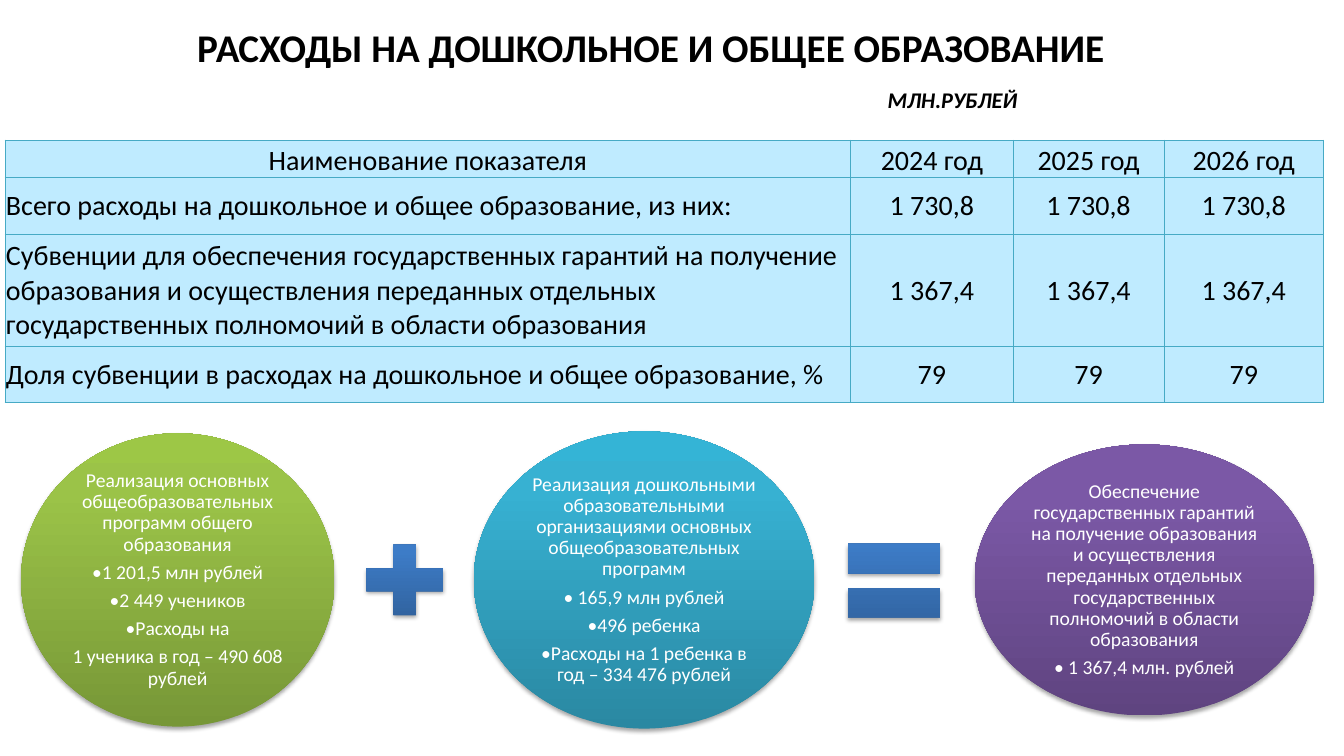
from copy import deepcopy

from lxml.etree import SubElement
from pptx import Presentation
from pptx.dml.color import RGBColor
from pptx.enum.shapes import MSO_SHAPE as Preset
from pptx.enum.text import MSO_ANCHOR as Anchor, PP_ALIGN as Align
from pptx.oxml.ns import qn
from pptx.util import Cm, Pt

BLACK = RGBColor(0x00, 0x00, 0x00)
WHITE = RGBColor(0xFF, 0xFF, 0xFF)
CELL_BLUE = RGBColor(0xBF, 0xEB, 0xFF)
GRID_TEAL = RGBColor(0x46, 0xAA, 0xC5)
GREEN = (RGBColor(0x77, 0x97, 0x37), RGBColor(0x9B, 0xC3, 0x48), RGBColor(0x9D, 0xC7, 0x46))
TEAL = (RGBColor(0x2A, 0x88, 0xA2), RGBColor(0x37, 0xB1, 0xD2), RGBColor(0x34, 0xB4, 0xD6))
PURPLE = (RGBColor(0x5F, 0x44, 0x80), RGBColor(0x7B, 0x58, 0xA6), RGBColor(0x7C, 0x57, 0xA8))
BLUE = (RGBColor(0x2F, 0x5F, 0x99), RGBColor(0x3D, 0x7C, 0xC7), RGBColor(0x3A, 0x7C, 0xCB))

HEADING = "РАСХОДЫ НА ДОШКОЛЬНОЕ И ОБЩЕЕ ОБРАЗОВАНИЕ"
UNITS = "МЛН.РУБЛЕЙ"
EXPENSES = [
    ["Наименование показателя", "2024 год", "2025 год", "2026 год"],
    ["Всего расходы на дошкольное и общее образование, из них:"] + ["1 730,8"] * 3,
    ["Субвенции для обеспечения государственных гарантий на получение образования "
     "и осуществления переданных отдельных государственных полномочий "
     "в области образования"] + ["1 367,4"] * 3,
    ["Доля субвенции в расходах на дошкольное и общее образование, %"] + ["79"] * 3,
]
SCHOOLS = [
    "Реализация основных общеобразовательных программ общего образования",
    "•1 201,5 млн рублей",
    "•2 449 учеников",
    "•Расходы на",
    "1 ученика в год – 490 608 рублей",
]
KINDERGARTENS = [
    "Реализация дошкольными образовательными организациями основных "
    "общеобразовательных программ",
    "• 165,9 млн рублей",
    "•496 ребенка",
    "•Расходы на 1 ребенка в год – 334 476 рублей",
]
GUARANTEES = [
    "Обеспечение государственных гарантий на получение образования и осуществления "
    "переданных отдельных государственных полномочий в области образования",
    "• 1 367,4 млн. рублей",
]


def apply(target, **values):
    for name, value in values.items():
        setattr(target, name, value)


class ExpenseSlide:
    font = "Calibri"

    def __init__(self, deck):
        self.slide = deck.slides.add_slide(deck.slide_layouts[5])
        self.shapes = self.slide.shapes

    def add_text(self, paragraph, text, size, color, **style):
        run = paragraph.add_run()
        run.text = text
        apply(run.font, name=self.font, size=Pt(size), **style)
        run.font.color.rgb = color

    def title(self, box, heading, units):
        title = self.shapes.title
        apply(title, **dict(zip(("left", "top", "width", "height"), map(Cm, box))))
        frame = title.text_frame
        apply(frame, word_wrap=True, vertical_anchor=Anchor.BOTTOM, margin_left=Cm(0.25),
              margin_right=Cm(0.25), margin_top=Cm(0.13), margin_bottom=Cm(0.24))
        first, second = frame.paragraphs[0], frame.add_paragraph()
        for paragraph in (first, second):
            apply(paragraph, alignment=Align.LEFT, space_before=Pt(0))
        self.add_text(first, heading, 28, BLACK, bold=True)
        second.space_before = Pt(11.4)
        second._p.get_or_add_pPr().set("marL", str(Cm(17.4)))
        self.add_text(second, units, 16, BLACK, bold=True, italic=True)

    def table(self, left, top, widths, heights, rows):
        grid = self.shapes.add_table(len(rows), len(widths), Cm(left), Cm(top),
                                     Cm(sum(widths)), Cm(sum(heights))).table
        apply(grid, first_row=False, horz_banding=False)
        for column, width in zip(grid.columns, widths):
            column.width = Cm(width)
        for row, height in zip(grid.rows, heights):
            row.height = Cm(height)
        for r, row in enumerate(rows):
            for c, text in enumerate(row):
                cell = grid.cell(r, c)
                apply(cell, margin_left=Cm(0.02), margin_right=Cm(0.02),
                      margin_top=Cm(0.02), margin_bottom=Cm(0),
                      vertical_anchor=Anchor.MIDDLE if r else Anchor.BOTTOM)
                self.border(cell)
                cell.fill.solid()
                cell.fill.fore_color.rgb = CELL_BLUE
                paragraph = cell.text_frame.paragraphs[0]
                paragraph.alignment = Align.LEFT if r and not c else Align.CENTER
                self.add_text(paragraph, text, 20, BLACK)

    def border(self, cell):
        properties = cell._tc.get_or_add_tcPr()
        for side in ("lnL", "lnR", "lnT", "lnB"):
            line = SubElement(properties, qn(f"a:{side}"), w=str(Pt(0.75)))
            fill = SubElement(line, qn("a:solidFill"))
            SubElement(fill, qn("a:srgbClr"), val=str(GRID_TEAL))

    def figure(self, preset, box, colors, lines=()):
        figure = self.shapes.add_shape(preset, *map(Cm, box))
        figure.line.fill.background()
        self.gradient(figure, colors)
        self.shadow(figure)
        frame = figure.text_frame
        apply(frame, word_wrap=True, vertical_anchor=Anchor.MIDDLE,
              **{f"margin_{side}": Cm(0.05) for side in ("left", "right", "top", "bottom")})
        for index, text in enumerate(lines):
            paragraph = frame.add_paragraph() if index else frame.paragraphs[0]
            apply(paragraph, alignment=Align.CENTER, line_spacing=0.9, space_after=Pt(5))
            self.add_text(paragraph, text, 14, WHITE)

    def gradient(self, figure, colors):
        figure.fill.gradient()
        figure.fill.gradient_angle = 90
        stop_list = figure._element.spPr.find(qn("a:gradFill")).find(qn("a:gsLst"))
        stop_list.append(deepcopy(stop_list[-1]))
        for stop, position, color in zip(figure.fill.gradient_stops, (0, 0.8, 1), colors):
            stop.position = position
            stop.color.rgb = color

    def shadow(self, figure):
        figure.shadow.inherit = False
        effects = figure._element.spPr.find(qn("a:effectLst"))
        outer = SubElement(effects, qn("a:outerShdw"), blurRad=str(Pt(3.1)),
                           dist=str(Pt(1.8)), dir="5400000", rotWithShape="0")
        color = SubElement(outer, qn("a:srgbClr"), val=str(BLACK))
        SubElement(color, qn("a:alpha"), val="35000")


def main():
    deck = Presentation()
    apply(deck, slide_width=Cm(33.87), slide_height=Cm(19.05))
    page = ExpenseSlide(deck)
    page.title((4.72, 0.53, 27.81, 2.57), HEADING, UNITS)
    page.figure(Preset.OVAL, (0.53, 10.92, 7.9, 7.39), GREEN, SCHOOLS)
    page.figure(Preset.MATH_PLUS, (8.89, 13.41, 2.62, 2.41), BLUE)
    page.figure(Preset.OVAL, (11.94, 10.87, 8.59, 7.49), TEAL, KINDERGARTENS)
    page.figure(Preset.MATH_EQUAL, (20.96, 13.06, 3.15, 3.15), BLUE)
    page.figure(Preset.OVAL, (24.56, 11.2, 8.56, 6.83), PURPLE, GUARANTEES)
    page.table(0.13, 3.53, (21.31, 4.09, 3.81, 4.01), (0.95, 1.42, 2.82, 1.42), EXPENSES)
    deck.save("out.pptx")


if __name__ == "__main__":
    main()
